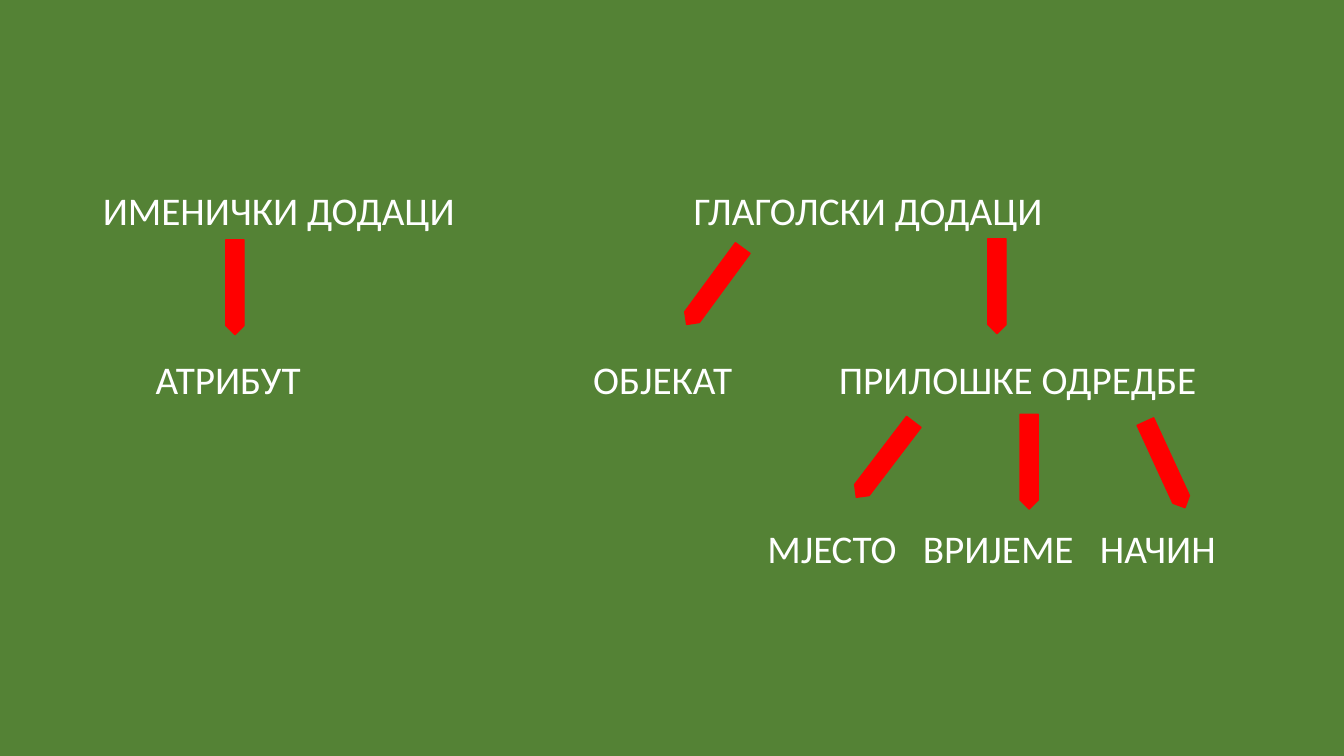
from dataclasses import dataclass

import pptx
import pptx.dml.color
import pptx.enum.shapes
import pptx.enum.text
import pptx.slide
import pptx.util

Pt = pptx.util.Pt
Color = pptx.dml.color.RGBColor


@dataclass(frozen=True)
class Theme:
    background: Color = Color(0x54, 0x82, 0x35)
    text: Color = Color(0xFF, 0xFF, 0xFF)
    arrow: Color = Color(0xFF, 0x00, 0x00)
    font: str = "Calibri"
    size: float = 28


@dataclass(frozen=True)
class Label:
    text: str
    center: float
    width: float
    level: int


@dataclass(frozen=True)
class Arrow:
    center_x: float
    center_y: float
    angle: float = 90


THEME = Theme()
FIRST_LEVEL, LEVEL_STEP, LABEL_HEIGHT = 150.2, 120.7, 34
ARROW_LENGTH, ARROW_THICKNESS = 67.7, 13

LABELS = [
    Label("ИМЕНИЧКИ ДОДАЦИ", 199, 256, 0),
    Label("ГЛАГОЛСКИ ДОДАЦИ", 620, 256, 0),
    Label("АТРИБУТ", 163, 108, 1),
    Label("ОБЈЕКАТ", 473.3, 104, 1),
    Label("ПРИЛОШКЕ ОДРЕДБЕ", 726.8, 260, 1),
    Label("МЈЕСТО", 594.3, 96, 2),
    Label("ВРИЈЕМЕ", 713, 112, 2),
    Label("НАЧИН", 827, 88, 2),
]

ARROWS = [
    Arrow(167.8, 205.2),
    Arrow(510.5, 204.5, 126.3),
    Arrow(712.1, 204.5),
    Arrow(632.2, 328.3, 127.3),
    Arrow(735.1, 329.8),
    Arrow(832.3, 331.9, 65.3),
]


def apply_format(target: object, values: dict) -> None:
    for name, value in values.items():
        setattr(target, name, value)


def centered_frame(x: float, y: float, width: float, height: float) -> tuple:
    """Return left, top, width and height of a frame centred on a point."""
    return Pt(x - width / 2), Pt(y - height / 2), Pt(width), Pt(height)


def add_label(slide: pptx.slide.Slide, label: Label) -> None:
    middle = FIRST_LEVEL + label.level * LEVEL_STEP
    box = slide.shapes.add_textbox(
        *centered_frame(label.center, middle, label.width, LABEL_HEIGHT))
    apply_format(box.text_frame, {
        "word_wrap": False,
        "vertical_anchor": pptx.enum.text.MSO_ANCHOR.MIDDLE,
        "margin_left": 0, "margin_right": 0,
        "margin_top": 0, "margin_bottom": 0,
    })
    para = box.text_frame.paragraphs[0]
    para.alignment = pptx.enum.text.PP_ALIGN.CENTER
    span = para.add_run()
    span.text = label.text
    apply_format(span.font, {"name": THEME.font, "size": Pt(THEME.size)})
    span.font.color.rgb = THEME.text


def add_arrow(slide: pptx.slide.Slide, arrow: Arrow) -> None:
    shape = slide.shapes.add_shape(
        pptx.enum.shapes.MSO_SHAPE.PENTAGON,
        *centered_frame(arrow.center_x, arrow.center_y,
                        ARROW_LENGTH, ARROW_THICKNESS))
    shape.rotation = arrow.angle
    shape.shadow.inherit = False
    for paint in (shape.fill, shape.line.fill):
        paint.solid()
        paint.fore_color.rgb = THEME.arrow
    shape.line.width = Pt(1)


def main() -> None:
    deck = pptx.Presentation()
    apply_format(deck, {"slide_width": Pt(960), "slide_height": Pt(540)})
    slide = deck.slides.add_slide(deck.slide_layouts[6])
    slide.background.fill.solid()
    slide.background.fill.fore_color.rgb = THEME.background
    for label in LABELS:
        add_label(slide, label)
    for arrow in ARROWS:
        add_arrow(slide, arrow)
    deck.save("out.pptx")


if __name__ == "__main__":
    main()
